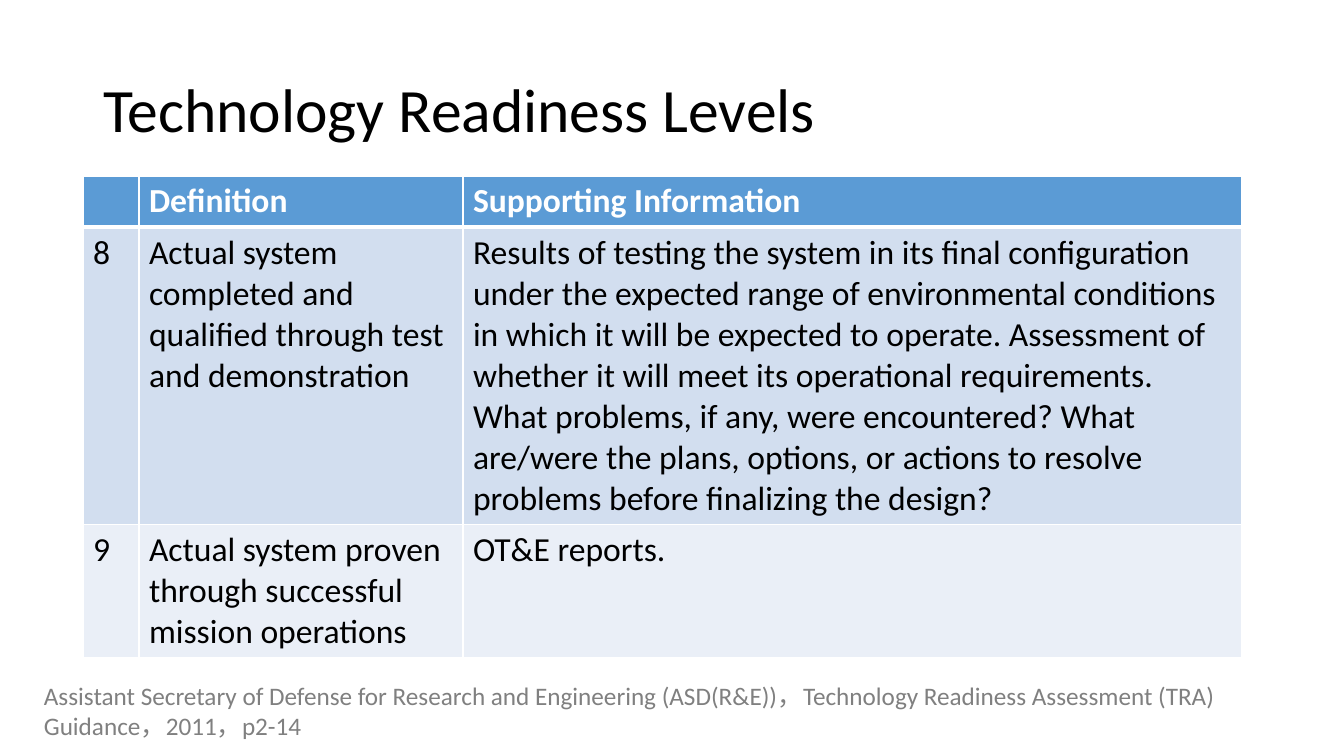
"""Build the Technology Readiness Levels slide, covering levels 8 and 9."""
from lxml.etree import SubElement
from pptx import Presentation
from pptx.dml.color import RGBColor
from pptx.enum.text import MSO_ANCHOR, MSO_AUTO_SIZE, PP_ALIGN
from pptx.oxml.ns import qn
from pptx.util import Emu, Pt

THEME = {
    "font": "Calibri",
    "title": {"size": 44, "color": "000000", "bold": False},
    "header": {"size": 24, "color": "FFFFFF", "bold": True},
    "body": {"size": 24, "color": "000000", "bold": False},
    "citation": {"size": 18, "color": "808080", "bold": False},
    "row_fills": ["5B9BD5", "D2DEEF", "EAEFF7"],
    "grid": "FFFFFF",
}
PX_PER_INCH = 100.8

COLUMN_WIDTHS = [56, 324, 779]
ROW_HEIGHTS = [50, 297, 133]
LEVELS = [
    ["", "Definition", "Supporting Information"],
    [
        "8",
        "Actual system completed and\nqualified through test and demonstration",
        "Results of testing the system in its final configuration under the "
        "expected range of environmental conditions in which it will be expected "
        "to operate. Assessment of whether it will meet its operational "
        "requirements. What problems, if any, were encountered? What are/were the "
        "plans, options, or actions to resolve problems before finalizing the design?",
    ],
    ["9", "Actual system proven through successful mission operations", "OT&E reports."],
]


def px(length):
    """Turn pixels into EMU."""
    return Emu(round(length * 914400 / PX_PER_INCH))


def write(frame, text, role):
    """Fill a text frame in the style of a theme role."""
    frame.text = text
    frame.word_wrap = True
    style = THEME[role]
    for paragraph in frame.paragraphs:
        paragraph.alignment = PP_ALIGN.LEFT
        font = paragraph.font
        values = {"name": THEME["font"], "size": Pt(style["size"]), "bold": style["bold"]}
        for attribute, value in values.items():
            setattr(font, attribute, value)
        font.color.rgb = RGBColor.from_string(style["color"])


deck = Presentation()
deck.slide_width, deck.slide_height = px(1344), px(756)
slide = deck.slides.add_slide(deck.slide_layouts[5])

title = slide.shapes.title
title_place = {"left": 93, "top": 40, "width": 1159, "height": 146}
for attribute, length in title_place.items():
    setattr(title, attribute, px(length))
write(title.text_frame, "Technology Readiness Levels", "title")
title.text_frame.auto_size = MSO_AUTO_SIZE.NONE
title.text_frame.vertical_anchor = MSO_ANCHOR.MIDDLE
title.text_frame.paragraphs[0].line_spacing = 0.9

levels = slide.shapes.add_table(
    len(LEVELS), len(COLUMN_WIDTHS),
    px(83), px(176), px(sum(COLUMN_WIDTHS)), px(sum(ROW_HEIGHTS)),
).table
levels.first_row = levels.horz_banding = False
for column, width in zip(levels.columns, COLUMN_WIDTHS):
    column.width = px(width)

for index, (row, height, texts) in enumerate(zip(levels.rows, ROW_HEIGHTS, LEVELS)):
    row.height = px(height)
    edge_points = {
        "L": 1,
        "R": 1,
        "T": 3 if index == 1 else 1,
        "B": 3 if index == 0 else 1,
    }
    for cell, text in zip(row.cells, texts):
        write(cell.text_frame, text, "body" if index else "header")
        properties = cell._tc.get_or_add_tcPr()
        for side, points in edge_points.items():
            edge = SubElement(properties, qn(f"a:ln{side}"), w=str(Pt(points)))
            edge_fill = SubElement(edge, qn("a:solidFill"))
            SubElement(edge_fill, qn("a:srgbClr"), val=THEME["grid"])
        cell.fill.solid()
        cell.fill.fore_color.rgb = RGBColor.from_string(THEME["row_fills"][index])

citation = slide.shapes.add_textbox(px(34), px(675), px(1255), px(72))
write(
    citation.text_frame,
    "Assistant Secretary of Defense for Research and Engineering (ASD(R&E))，"
    "Technology Readiness Assessment (TRA) Guidance，2011，p2-14",
    "citation",
)

deck.save("out.pptx")
